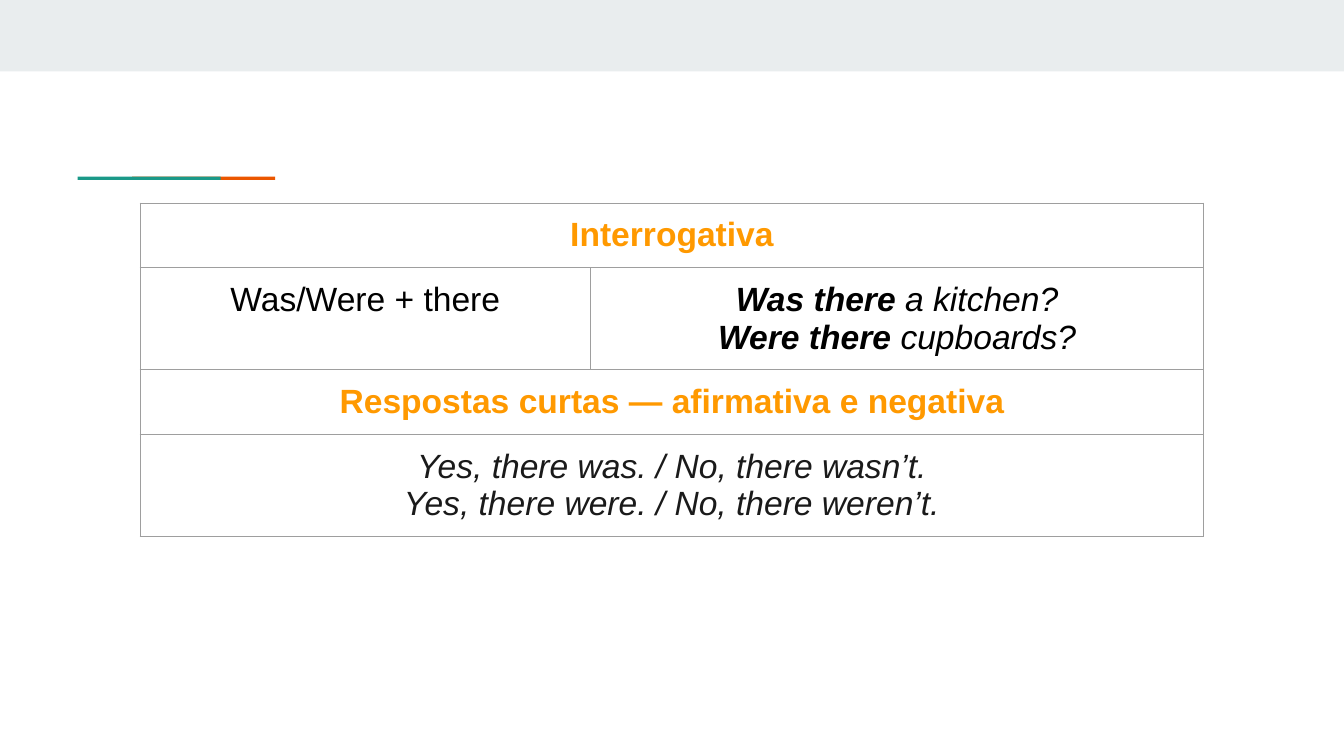
from dataclasses import dataclass
from lxml.etree import SubElement
from pptx import Presentation
from pptx.dml.color import RGBColor as Rgb
from pptx.enum.shapes import MSO_SHAPE as Kind
from pptx.enum.text import PP_ALIGN as Align
from pptx.oxml.ns import qn
from pptx.util import Cm, Pt


@dataclass(frozen=True)
class Theme:
    font: str = "Arial"
    size: int = 18
    band: str = "E9EDEE"
    teal: str = "1A9988"
    flame: str = "EB5600"
    head: str = "FF9900"
    black: str = "000000"
    ink: str = "1A1A1A"
    edge: str = "9E9E9E"
    line: float = 0.75


@dataclass(frozen=True)
class Bar:
    left: float
    top: float
    width: float
    height: float
    color: str


@dataclass(frozen=True)
class Run:
    text: str
    color: str
    bold: bool = False
    italic: bool = False


@dataclass(frozen=True)
class Entry:
    row: int
    col: int
    lines: list[list[Run]]
    wide: bool = False


LOOK = Theme()
PAD = Cm(0.25)
COLS = [8.51, 11.59]
ROWS = [1.22, 1.93, 1.22, 1.93]
BARS = [
    Bar(0, 0, 25.4, 1.35, LOOK.band),
    Bar(2.5, 3.34, 2.7, 0.06, LOOK.flame),
    Bar(1.47, 3.34, 2.7, 0.06, LOOK.teal),
]


def head(text: str) -> list[list[Run]]:
    return [[Run(text, LOOK.head, bold=True)]]


def query(start: str, rest: str) -> list[Run]:
    """Stress the opening words of a sample question."""
    return [Run(start, LOOK.black, True, True),
            Run(rest, LOOK.black, italic=True)]


def reply(text: str) -> list[Run]:
    return [Run(text, LOOK.ink, italic=True)]


ENTRIES = [
    Entry(0, 0, head("Interrogativa"), wide=True),
    Entry(1, 0, [[Run("Was/Were + there", LOOK.black)]]),
    Entry(1, 1, [query("Was there", " a kitchen?"),
                 query("Were there ", "cupboards?")]),
    Entry(2, 0, head("Respostas curtas — afirmativa e negativa"), wide=True),
    Entry(3, 0, [reply("Yes, there was. / No, there wasn’t."),
                 reply("Yes, there were. / No, there weren’t.")], wide=True),
]


def draw_bar(slide, bar: Bar) -> None:
    box = (Cm(v) for v in (bar.left, bar.top, bar.width, bar.height))
    shape = slide.shapes.add_shape(Kind.RECTANGLE, *box)
    shape.shadow.inherit = False
    shape.fill.solid()
    shape.fill.fore_color.rgb = Rgb.from_string(bar.color)
    shape.line.fill.background()


def frame(cell) -> None:
    """Give a cell four thin borders, no fill and even margins."""
    props = cell._tc.get_or_add_tcPr()
    for side in ("lnL", "lnR", "lnT", "lnB"):
        line = SubElement(props, qn(f"a:{side}"), w=str(Pt(LOOK.line)))
        fill = SubElement(line, qn("a:solidFill"))
        SubElement(fill, qn("a:srgbClr"), val=LOOK.edge)
    cell.fill.background()
    for side in ("left", "right", "top", "bottom"):
        setattr(cell, f"margin_{side}", PAD)


def write(cell, lines: list[list[Run]]) -> None:
    text = cell.text_frame
    for i, line in enumerate(lines):
        para = text.add_paragraph() if i else text.paragraphs[0]
        para.alignment = Align.CENTER
        for part in line:
            run = para.add_run()
            run.text = part.text
            style = {"name": LOOK.font, "size": Pt(LOOK.size),
                     "bold": part.bold, "italic": part.italic}
            for key, value in style.items():
                setattr(run.font, key, value)
            run.font.color.rgb = Rgb.from_string(part.color)


def draw_table(slide) -> None:
    table = slide.shapes.add_table(
        len(ROWS), len(COLS), Cm(2.65), Cm(3.84),
        Cm(sum(COLS)), Cm(sum(ROWS))).table
    table.first_row = table.horz_banding = False
    for col, width in zip(table.columns, COLS):
        col.width = Cm(width)
    for row, height in zip(table.rows, ROWS):
        row.height = Cm(height)
    for cell in table.iter_cells():
        frame(cell)
    for entry in ENTRIES:
        cell = table.cell(entry.row, entry.col)
        if entry.wide:
            cell.merge(table.cell(entry.row, len(COLS) - 1))
        write(cell, entry.lines)


def main() -> None:
    deck = Presentation()
    deck.slide_width, deck.slide_height = Cm(25.4), Cm(14.29)
    slide = deck.slides.add_slide(deck.slide_layouts[6])
    for bar in BARS:
        draw_bar(slide, bar)
    draw_table(slide)
    deck.save("out.pptx")


if __name__ == "__main__":
    main()
